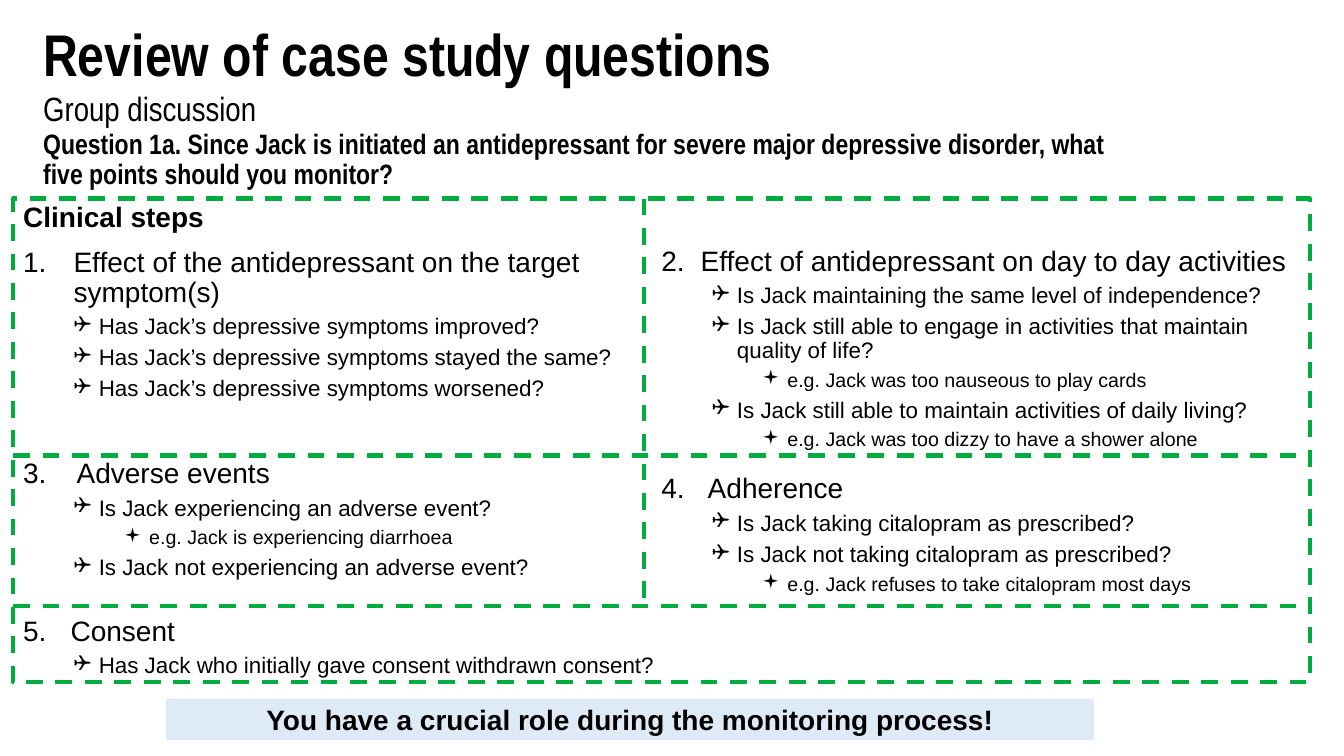
from dataclasses import dataclass

from lxml.etree import SubElement
from pptx import Presentation
from pptx.dml.color import RGBColor
from pptx.enum.dml import MSO_LINE_DASH_STYLE as Dash
from pptx.enum.shapes import MSO_CONNECTOR as Connector, MSO_SHAPE as Shape
from pptx.enum.text import MSO_ANCHOR as Anchor, PP_ALIGN as Align
from pptx.oxml.ns import qn
from pptx.util import Inches, Pt


@dataclass(frozen=True)
class Theme:
    body_font: str = "Arial"
    heading_font: str = "Arial Narrow"
    ink: RGBColor = RGBColor.from_string("000000")
    paper: RGBColor = RGBColor.from_string("FFFFFF")
    grid: RGBColor = RGBColor.from_string("00AC3E")
    banner: RGBColor = RGBColor.from_string("DEEBF7")
    title_size: int = 42
    subtitle_size: int = 24
    step_size: int = 20
    check_size: int = 16
    example_size: int = 14
    grid_width: int = 3
    line_spacing: float = 0.9


THEME = Theme()


@dataclass(frozen=True)
class Heading:
    text: str
    top: float
    width: float
    height: float
    size: int
    bold: bool


@dataclass(frozen=True)
class Level:
    size: int
    margin: float
    hanging: float
    space_before: int
    bullet: str


@dataclass(frozen=True)
class Step:
    number: int
    title: str
    left: float
    top: float
    height: float
    title_indent: float
    points: tuple[tuple[Level, str], ...]
    caption: str = ""


CAPTION = Level(THEME.step_size, 0, 0, 0, "")
CHECK = Level(THEME.check_size, 0.75, 0.25, 5, "❑")
EXAMPLE = Level(THEME.example_size, 1.25, 0.25, 5, "▪")

GRID_LEFT, GRID_TOP, GRID_RIGHT, GRID_BOTTOM = 0.13, 1.97, 12.99, 6.77
ROW_LINES = (4.52, 6.01)
COLUMN_LINE = 6.39
LEFT_TEXT, RIGHT_TEXT, TEXT_WIDTH = 0.23, 6.56, 6.33

HEADINGS = (
    Heading("Review of case study questions", 0.21, 10.78, 0.81, THEME.title_size, True),
    Heading("Group discussion", 0.87, 8.15, 0.51, THEME.subtitle_size, False),
    Heading("Question 1a. Since Jack is initiated an antidepressant for severe major "
            "depressive disorder, what five points should you monitor?",
            1.24, 11.09, 0.65, THEME.step_size, True),
)

STEPS = (
    Step(1, "Effect of the antidepressant on the target symptom(s)",
         LEFT_TEXT, 2.02, 2.4, 0.5, (
             (CHECK, "Has Jack’s depressive symptoms improved?"),
             (CHECK, "Has Jack’s depressive symptoms stayed the same?"),
             (CHECK, "Has Jack’s depressive symptoms worsened?"),
         ), caption="Clinical steps"),
    Step(2, "Effect of antidepressant on day to day activities",
         RIGHT_TEXT, 2.45, 2.05, 0.39, (
             (CHECK, "Is Jack maintaining the same level of independence?"),
             (CHECK, "Is Jack still able to engage in activities that maintain quality of life?"),
             (EXAMPLE, "e.g. Jack was too nauseous to play cards"),
             (CHECK, "Is Jack still able to maintain activities of daily living?"),
             (EXAMPLE, "e.g. Jack was too dizzy to have a shower alone"),
         )),
    Step(3, "Adverse events", LEFT_TEXT, 4.56, 1.4, 0.53, (
        (CHECK, "Is Jack experiencing an adverse event?"),
        (EXAMPLE, "e.g. Jack is experiencing diarrhoea"),
        (CHECK, "Is Jack not experiencing an adverse event?"),
    )),
    Step(4, "Adherence", RIGHT_TEXT, 4.71, 1.25, 0.46, (
        (CHECK, "Is Jack taking citalopram as prescribed?"),
        (CHECK, "Is Jack not taking citalopram as prescribed?"),
        (EXAMPLE, "e.g. Jack refuses to take citalopram most days"),
    )),
    Step(5, "Consent", LEFT_TEXT, 6.12, 0.62, 0.47, (
        (CHECK, "Has Jack who initially gave consent withdrawn consent?"),
    )),
)


def style_font(paragraph, name: str, size: int, bold: bool) -> None:
    font = paragraph.font
    font.name, font.size, font.bold = name, Pt(size), bold
    font.color.rgb = THEME.ink


def add_heading(slide, heading: Heading) -> None:
    frame = slide.shapes.add_textbox(Inches(0.33), Inches(heading.top), Inches(heading.width),
                                     Inches(heading.height)).text_frame
    frame.word_wrap = True
    paragraph = frame.paragraphs[0]
    paragraph.text = heading.text
    paragraph.line_spacing = THEME.line_spacing
    style_font(paragraph, THEME.heading_font, heading.size, heading.bold)


def add_step_paragraph(frame, text: str, level: Level, number: int = 0, bold: bool = False) -> None:
    """Append a line with a numeral, a bullet character or neither."""
    first = not frame.text
    paragraph = frame.paragraphs[0] if first else frame.add_paragraph()
    paragraph.text = text
    paragraph.line_spacing = THEME.line_spacing
    paragraph.space_before = Pt(0 if first else level.space_before)
    properties = paragraph._p.get_or_add_pPr()
    properties.set("marL", str(Inches(level.margin)))
    properties.set("indent", str(-Inches(level.hanging)))
    if number:
        SubElement(properties, qn("a:buFont"), typeface=THEME.body_font)
        SubElement(properties, qn("a:buAutoNum"), type="arabicPeriod", startAt=str(number))
    elif level.bullet:
        SubElement(properties, qn("a:buFont"), typeface="Wingdings")
        SubElement(properties, qn("a:buChar"), char=level.bullet)
    style_font(paragraph, THEME.body_font, level.size, bold)


def add_step(slide, step: Step) -> None:
    frame = slide.shapes.add_textbox(Inches(step.left), Inches(step.top), Inches(TEXT_WIDTH),
                                     Inches(step.height)).text_frame
    frame.word_wrap = True
    frame.margin_left = frame.margin_right = frame.margin_top = frame.margin_bottom = 0
    if step.caption:
        add_step_paragraph(frame, step.caption, CAPTION, bold=True)
    title_level = Level(THEME.step_size, step.title_indent, step.title_indent, 10, "")
    add_step_paragraph(frame, step.title, title_level, number=step.number)
    for level, text in step.points:
        add_step_paragraph(frame, text, level)


def style_grid_line(line) -> None:
    line.color.rgb = THEME.grid
    line.width = Pt(THEME.grid_width)
    line.dash_style = Dash.DASH


def add_divider(slide, x1: float, y1: float, x2: float, y2: float) -> None:
    divider = slide.shapes.add_connector(Connector.STRAIGHT, Inches(x1), Inches(y1),
                                         Inches(x2), Inches(y2))
    style_grid_line(divider.line)
    SubElement(divider._element.spPr, qn("a:effectLst"))


def add_grid(slide) -> None:
    border = slide.shapes.add_shape(Shape.RECTANGLE, Inches(GRID_LEFT), Inches(GRID_TOP),
                                    Inches(GRID_RIGHT - GRID_LEFT), Inches(GRID_BOTTOM - GRID_TOP))
    border.shadow.inherit = False
    border.fill.background()
    style_grid_line(border.line)
    for y in ROW_LINES:
        add_divider(slide, GRID_LEFT, y, GRID_RIGHT, y)
    add_divider(slide, COLUMN_LINE, GRID_TOP, COLUMN_LINE, ROW_LINES[-1])


def add_banner(slide, message: str) -> None:
    banner = slide.shapes.add_shape(Shape.RECTANGLE, Inches(1.63), Inches(6.92),
                                    Inches(9.24), Inches(0.44))
    banner.shadow.inherit = False
    banner.fill.solid()
    banner.fill.fore_color.rgb = THEME.banner
    banner.line.color.rgb = THEME.paper
    banner.line.width = Pt(2.25)
    frame = banner.text_frame
    frame.word_wrap = True
    frame.vertical_anchor = Anchor.MIDDLE
    paragraph = frame.paragraphs[0]
    paragraph.text = message
    paragraph.alignment = Align.CENTER
    style_font(paragraph, THEME.body_font, THEME.step_size, True)


def main() -> None:
    deck = Presentation()
    deck.slide_width, deck.slide_height = Inches(13.33), Inches(7.5)
    slide = deck.slides.add_slide(deck.slide_layouts[6])
    for heading in HEADINGS:
        add_heading(slide, heading)
    add_grid(slide)
    for step in STEPS:
        add_step(slide, step)
    add_banner(slide, "You have a crucial role during the monitoring process!")
    deck.save("out.pptx")


if __name__ == "__main__":
    main()
